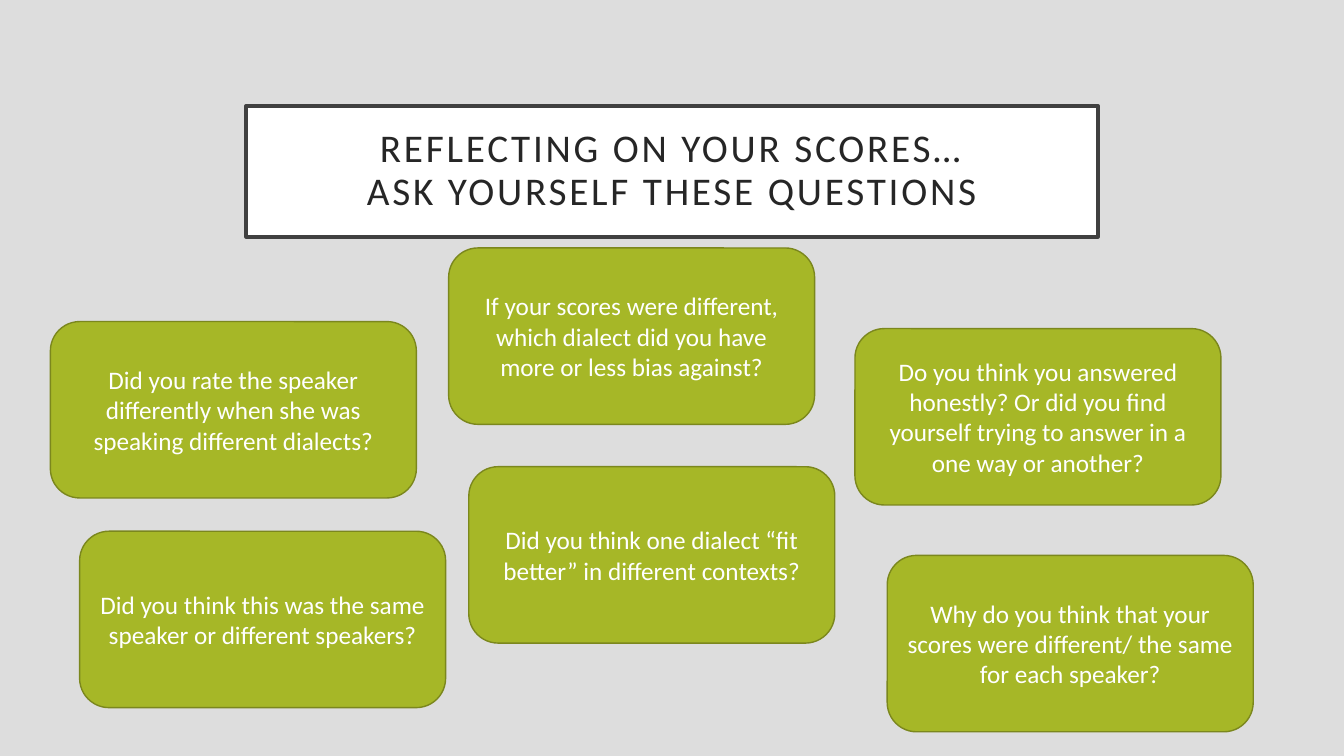
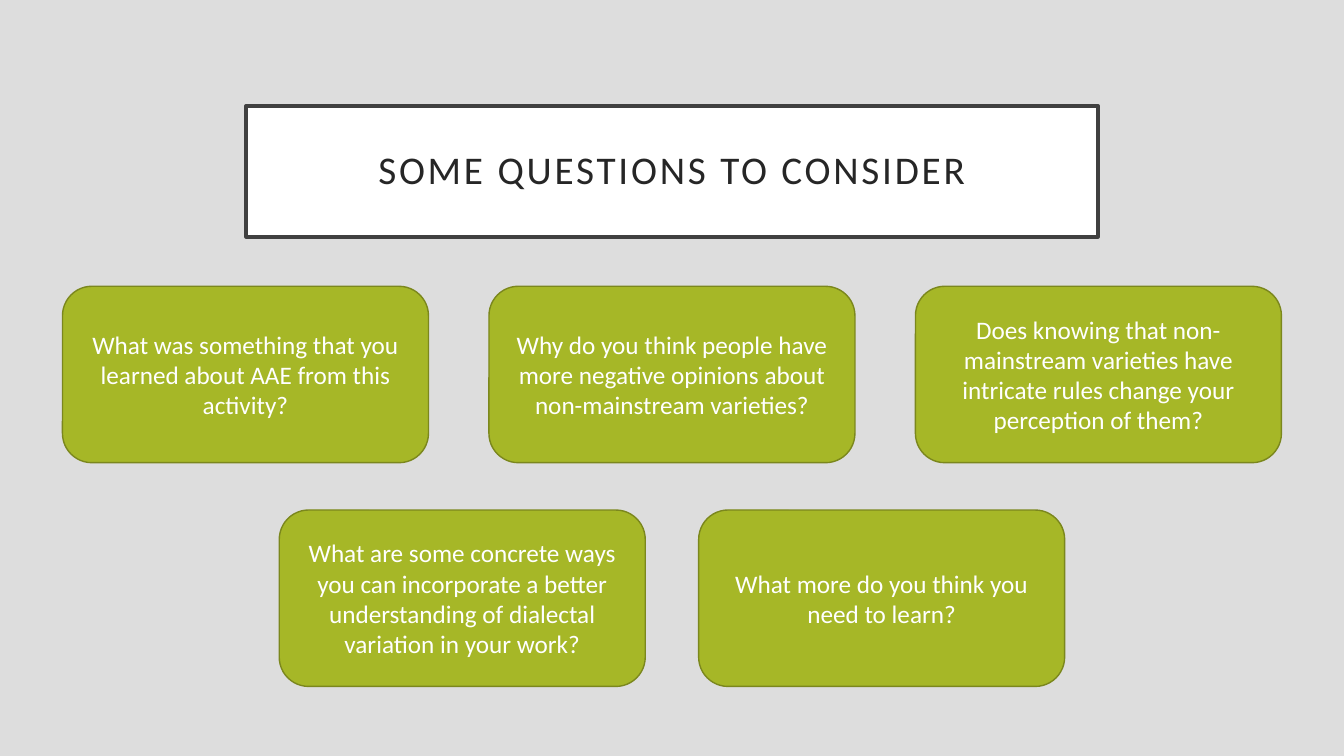
from dataclasses import dataclass

from lxml.etree import SubElement
from pptx import Presentation
from pptx.dml.color import RGBColor
from pptx.enum.shapes import MSO_SHAPE as Shape
from pptx.enum.text import MSO_ANCHOR as Anchor, MSO_AUTO_SIZE as AutoSize, PP_ALIGN as Align
from pptx.oxml.ns import qn
from pptx.util import Inches, Pt


@dataclass(frozen=True)
class Theme:
    font: str = "Calibri"
    background: str = "DDDDDD"
    title_fill: str = "FFFFFF"
    title_line: str = "404040"
    title_text: str = "262626"
    card_fill: str = "A6B727"
    card_line: str = "7B871D"
    card_text: str = "FFFFFF"
    title_size: int = 28
    title_tracking: int = 2
    card_size: int = 18


THEME = Theme()
SLIDE_W, SLIDE_H = 13.33, 7.5
TITLE_BOX = (2.44, 1.05, 8.45, 1.3)
TITLE_INSET = 0.2
CARD_W, CARD_H = 3.63, 1.75

REFLECTION_TITLE = "REFLECTING ON YOUR SCORES…\vASK YOURSELF THESE QUESTIONS"
REFLECTION_CARDS = [
    (0.5, 3.19, "Did you rate the speaker differently when she was speaking different dialects?"),
    (4.45, 2.46, "If your scores were different, which dialect did you have more or less bias against?"),
    (0.79, 5.27, "Did you think this was the same speaker or different speakers?"),
    (8.48, 3.26, "Do you think you answered honestly? Or did you find yourself trying to answer in a one way or another?"),
    (8.8, 5.51, "Why do you think that your scores were different/ the same for each speaker?"),
    (4.65, 4.63, "Did you think one dialect “fit better” in different contexts?"),
]

CONSIDER_TITLE = "SOME QUESTIONS TO CONSIDER"
CONSIDER_ROWS = [
    (2.84, 0.6, [
        "What was something that you learned about AAE from this activity?",
        "Why do you think people have more negative opinions about non-mainstream varieties?",
        "Does knowing that non-mainstream varieties have intricate rules change your perception of them?",
    ]),
    (5.06, 0.53, [
        "What are some concrete ways you can incorporate a better understanding of dialectal variation in your work?",
        "What more do you think you need to learn?",
    ]),
]


def centred_cards(rows):
    cards = []
    for top, gap, questions in rows:
        row_width = len(questions) * (CARD_W + gap) - gap
        left = (SLIDE_W - row_width) / 2
        cards += [(left + i * (CARD_W + gap), top, question)
                  for i, question in enumerate(questions)]
    return cards


def paint(shape, fill, line, line_width):
    shape.fill.solid()
    shape.fill.fore_color.rgb = RGBColor.from_string(fill)
    shape.line.color.rgb = RGBColor.from_string(line)
    shape.line.width = Pt(line_width)


def write(shape, text, size, color):
    frame = shape.text_frame
    frame.text = text
    frame.word_wrap = True
    frame.auto_size = AutoSize.NONE
    frame.vertical_anchor = Anchor.MIDDLE
    paragraph = frame.paragraphs[0]
    paragraph.alignment = Align.CENTER
    for run in paragraph.runs:
        run.font.name = THEME.font
        run.font.size = Pt(size)
        run.font.color.rgb = RGBColor.from_string(color)
    return paragraph


def add_title(slide, text):
    title = slide.shapes.title
    title.left, title.top, title.width, title.height = map(Inches, TITLE_BOX)
    paint(title, THEME.title_fill, THEME.title_line, 2.5)
    paragraph = write(title, text, THEME.title_size, THEME.title_text)
    paragraph.line_spacing = 0.9
    frame = title.text_frame
    frame.margin_left = frame.margin_right = Inches(TITLE_INSET)
    frame.margin_top = frame.margin_bottom = Inches(TITLE_INSET)
    for run in paragraph.runs:
        run.font._element.set("spc", str(THEME.title_tracking * 100))
    for line_break in paragraph._p.findall(qn("a:br")):
        SubElement(line_break, qn("a:rPr")).set("sz", str(THEME.title_size * 100))


def add_card(slide, left, top, question):
    card = slide.shapes.add_shape(
        Shape.ROUNDED_RECTANGLE, *map(Inches, (left, top, CARD_W, CARD_H)))
    card.shadow.inherit = False
    paint(card, THEME.card_fill, THEME.card_line, 1)
    write(card, question, THEME.card_size, THEME.card_text)


def main():
    deck = Presentation()
    deck.slide_width, deck.slide_height = Inches(SLIDE_W), Inches(SLIDE_H)
    backdrop = deck.slide_master.background.fill
    backdrop.solid()
    backdrop.fore_color.rgb = RGBColor.from_string(THEME.background)
    title_only = deck.slide_layouts.get_by_name("Title Only")
    for title, cards in [
        (REFLECTION_TITLE, REFLECTION_CARDS),
        (CONSIDER_TITLE, centred_cards(CONSIDER_ROWS)),
    ]:
        slide = deck.slides.add_slide(title_only)
        add_title(slide, title)
        for card in cards:
            add_card(slide, *card)
    deck.save("out.pptx")


if __name__ == "__main__":
    main()
